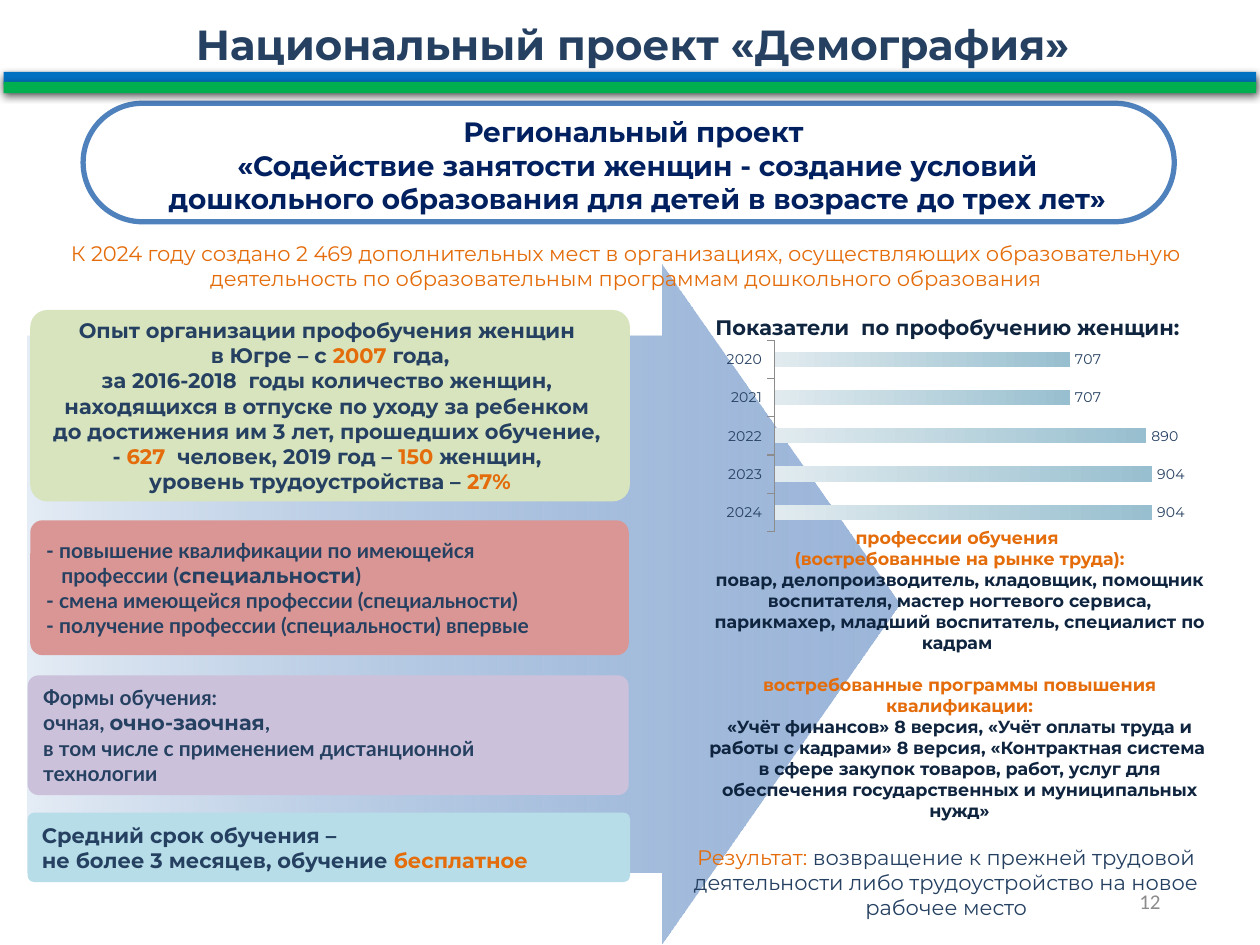
from lxml import etree
from pptx import Presentation
from pptx.chart.data import CategoryChartData
from pptx.dml.color import RGBColor
from pptx.enum.chart import XL_CHART_TYPE, XL_LABEL_POSITION, XL_TICK_MARK
from pptx.enum.shapes import MSO_SHAPE as Shape
from pptx.enum.text import MSO_ANCHOR as Anchor, MSO_AUTO_SIZE as AutoSize, PP_ALIGN as Align
from pptx.oxml.ns import qn
from pptx.util import Inches, Pt

NAVY = RGBColor(0x25, 0x40, 0x61)
DARK = RGBColor(0x0F, 0x24, 0x3E)
DEEP_BLUE = RGBColor(0x00, 0x20, 0x60)
ORANGE = RGBColor(0xE4, 0x6C, 0x0A)
GREY = RGBColor(0x8C, 0x8C, 0x8C)
FRAME_BLUE = RGBColor(0x4F, 0x81, 0xBD)
ARROW_TIP = RGBColor(0x9C, 0xB6, 0xDA)
BAND_BLUE = RGBColor(0x00, 0x70, 0xC0)
BAND_GREEN = RGBColor(0x00, 0xB0, 0x50)
GREEN = RGBColor(0xD7, 0xE4, 0xBD)
RED = RGBColor(0xD9, 0x96, 0x94)
VIOLET = RGBColor(0xCC, 0xC1, 0xDA)
CYAN = RGBColor(0xB7, 0xDE, 0xE8)
BAR_DARK = RGBColor(0x98, 0xBF, 0xCF)
BAR_LIGHT = RGBColor(0xE1, 0xEB, 0xEF)
MAIN, SECOND = "Montserrat", "Lato"


def inches(box):
    return [Inches(value) for value in box]


def write(frame, lines, size, color=NAVY, font=MAIN, bold=True, align=Align.CENTER):
    """Each line is a list of spans: a string, or (string, color, font)."""
    for index, line in enumerate(lines):
        para = frame.paragraphs[0] if index == 0 else frame.add_paragraph()
        para.alignment = align
        for span in line:
            text, span_color, span_font = (span, color, font) if isinstance(span, str) else span
            run = para.add_run()
            run.text = text
            run.font.size, run.font.bold, run.font.name = Pt(size), bold, span_font
            run.font.color.rgb = span_color


def add_text(page, box, lines, size, **style):
    frame = page.shapes.add_textbox(*inches(box)).text_frame
    frame.word_wrap = True
    frame.auto_size = AutoSize.SHAPE_TO_FIT_TEXT
    write(frame, lines, size, **style)
    return frame


def add_plain_shape(page, kind, box, fill=None):
    shape = page.shapes.add_shape(kind, *inches(box))
    shape.shadow.inherit = False
    shape.line.fill.background()
    if fill is None:
        shape.fill.background()
    else:
        shape.fill.solid()
        shape.fill.fore_color.rgb = fill
    return shape


def set_gradient(fill, start, end, angle):
    fill.gradient()
    fill.gradient_angle = angle
    for stop, color, position in zip(fill.gradient_stops, (start, end), (0, 1)):
        stop.color.rgb = color
        stop.position = position


def add_arrow(page, box):
    arrow = add_plain_shape(page, Shape.RIGHT_ARROW, box)
    arrow.adjustments[0], arrow.adjustments[1] = 0.79, 0.35
    set_gradient(arrow.fill, FRAME_BLUE, ARROW_TIP, 0)
    first_color = next(arrow.element.spPr.iter(qn("a:srgbClr")))
    etree.SubElement(first_color, qn("a:alpha"), val="15000")


def add_header(page, box):
    left, top, width, height = box
    title = page.shapes.title
    title.left, title.top, title.width, title.height = inches(box)
    title.text_frame.vertical_anchor = Anchor.BOTTOM
    write(title.text_frame, [["Национальный проект «Демография»"]], 24)
    for offset, thickness, color in ((0.57, 0.1, BAND_BLUE), (0.65, 0.09, BAND_GREEN)):
        band = add_plain_shape(page, Shape.RECTANGLE,
                               (left + 0.01, top + offset, width - 0.06, thickness), color)
        effects = band.element.spPr.find(qn("a:effectLst"))
        shadow = etree.SubElement(effects, qn("a:outerShdw"), blurRad="57150", dist="19050",
                                  dir="5400000", algn="ctr", rotWithShape="0")
        black = etree.SubElement(shadow, qn("a:srgbClr"), val="000000")
        etree.SubElement(black, qn("a:alpha"), val="63000")


def add_project_name(page, box):
    left, top, width, height = box
    pill = add_plain_shape(page, Shape.ROUNDED_RECTANGLE, box)
    pill.adjustments[0] = 0.5
    pill.line.color.rgb = FRAME_BLUE
    pill.line.width = Pt(3)
    add_text(page, (left + 0.39, top + 0.04, width - 0.64, height - 0.03), [
        ["Региональный проект "],
        ["«Содействие занятости женщин - создание условий дошкольного образования "
         "для детей в возрасте до трех лет»"],
    ], 16, color=DEEP_BLUE)


def add_card(page, box, fill, lines, font=MAIN, align=Align.LEFT):
    card = add_plain_shape(page, Shape.ROUNDED_RECTANGLE, box, fill)
    card.adjustments[0] = 0.09
    frame = card.text_frame
    frame.word_wrap = False
    frame.vertical_anchor = Anchor.MIDDLE
    write(frame, lines, 12, font=font, align=align)
    return frame


def add_cards(page, left, top):
    add_card(page, (left + 0.02, top, 4.76, 1.52), GREEN, [
        ["Опыт организации профобучения женщин "],
        ["в Югре – с ", ("2007", ORANGE, MAIN), " года,"],
        ["за 2016-2018  годы количество женщин, "],
        ["находящихся в отпуске по уходу за ребенком "],
        ["до достижения им 3 лет, прошедших обучение, "],
        ["- ", ("627 ", ORANGE, MAIN), " человек, 2019 год – ", ("150", ORANGE, MAIN), " женщин, "],
        ["уровень трудоустройства – ", ("27%", ORANGE, MAIN)],
    ], align=Align.CENTER)
    goals = add_card(page, (left + 0.02, top + 1.67, 4.75, 1.07), RED, [
        ["- повышение квалификации по имеющейся"],
        ["профессии (", ("специальности", NAVY, MAIN), ")"],
        ["- смена имеющейся профессии (специальности)"],
        ["- получение профессии (специальности) впервые"],
    ], font=SECOND)
    continuation = goals.paragraphs[1]._p.get_or_add_pPr()
    continuation.set("marL", str(Inches(0.12)))
    add_card(page, (left, top + 2.9, 4.77, 0.95), VIOLET, [
        ["Формы обучения:"],
        ["очная, ", ("очно-заочная", NAVY, MAIN), ","],
        ["в том числе с применением дистанционной"],
        ["технологии"],
    ], font=SECOND)
    add_card(page, (left, top + 3.99, 4.78, 0.55), CYAN, [
        ["Средний срок обучения –"],
        ["не более 3 месяцев, обучение ", ("бесплатное", ORANGE, MAIN)],
    ])


def add_training_chart(page, box):
    data = CategoryChartData()
    data.categories = ["2020", "2021", "2022", "2023", "2024"]
    data.add_series("Обучение женщин", (707, 707, 890, 904, 904))
    chart = page.shapes.add_chart(XL_CHART_TYPE.BAR_CLUSTERED, *inches(box), data).chart
    chart.has_legend = chart.has_title = False
    chart.font.size, chart.font.name, chart.font.color.rgb = Pt(8), MAIN, NAVY
    years, values = chart.category_axis, chart.value_axis
    years.reverse_order = True
    years.major_tick_mark = XL_TICK_MARK.OUTSIDE
    years.format.line.color.rgb = GREY
    values.visible = values.has_major_gridlines = False
    values.minimum_scale, values.maximum_scale = 0, 1000
    plot = chart.plots[0]
    plot.gap_width = 150
    plot.vary_by_categories = False
    plot.has_data_labels = True
    labels = plot.data_labels
    labels.show_value = True
    labels.position = XL_LABEL_POSITION.OUTSIDE_END
    labels.font.size, labels.font.name, labels.font.color.rgb = Pt(8), MAIN, NAVY
    set_gradient(plot.series[0].format.fill, BAR_DARK, BAR_LIGHT, 180)


def add_indicators(page, left, top):
    professions = add_text(page, (left + 0.14, top + 1.68, 4.17, 2.46), [
        [("профессии обучения ", ORANGE, MAIN)],
        [("(востребованные на рынке труда):", ORANGE, MAIN)],
        ["повар, делопроизводитель, кладовщик, помощник воспитателя, мастер ногтевого сервиса, "
         "парикмахер, младший воспитатель, специалист по кадрам "],
        [("востребованные программы повышения квалификации:", ORANGE, MAIN)],
        ["«Учёт финансов» 8 версия, «Учёт оплаты труда и работы с кадрами» 8 версия, "
         "«Контрактная система  в сфере закупок товаров, работ, услуг для обеспечения "
         "государственных и муниципальных нужд»"],
    ], 10, color=DARK)
    professions.paragraphs[3].space_before = Pt(12)
    add_text(page, (left + 0.07, top, 4.17, 0.3),
             [["Показатели  по профобучению женщин: "]], 12, color=DARK)
    add_training_chart(page, (left + 0.3, top + 0.22, 3.85, 1.58))
    add_text(page, (left, top + 4.2, 4.24, 0.71), [
        [("Результат: ", ORANGE, MAIN),
         "возвращение к прежней трудовой деятельности либо трудоустройство на новое рабочее место"],
    ], 12, bold=False)


def main():
    deck = Presentation()
    deck.slide_width, deck.slide_height = Inches(10), Inches(7.5)
    page = deck.slides.add_slide(deck.slide_layouts[5])
    add_arrow(page, (0.22, 2.1, 6.92, 5.39))
    add_project_name(page, (0.66, 0.82, 8.66, 0.94))
    add_indicators(page, 5.39, 2.45)
    add_header(page, (0.02, 0, 10, 0.6))
    add_cards(page, 0.22, 2.46)
    add_text(page, (0.24, 1.86, 9.46, 0.5), [
        ["К 2024 году создано 2 469 дополнительных мест в организациях, осуществляющих "
         "образовательную деятельность по образовательным программам дошкольного образования"],
    ], 12, color=ORANGE, bold=False)
    number = add_text(page, (7.06, 6.95, 2.25, 0.4), [["12"]], 12,
                      color=GREY, font="Calibri", bold=False, align=Align.RIGHT)
    number.auto_size = AutoSize.NONE
    number.vertical_anchor = Anchor.MIDDLE
    deck.save("out.pptx")


if __name__ == "__main__":
    main()
